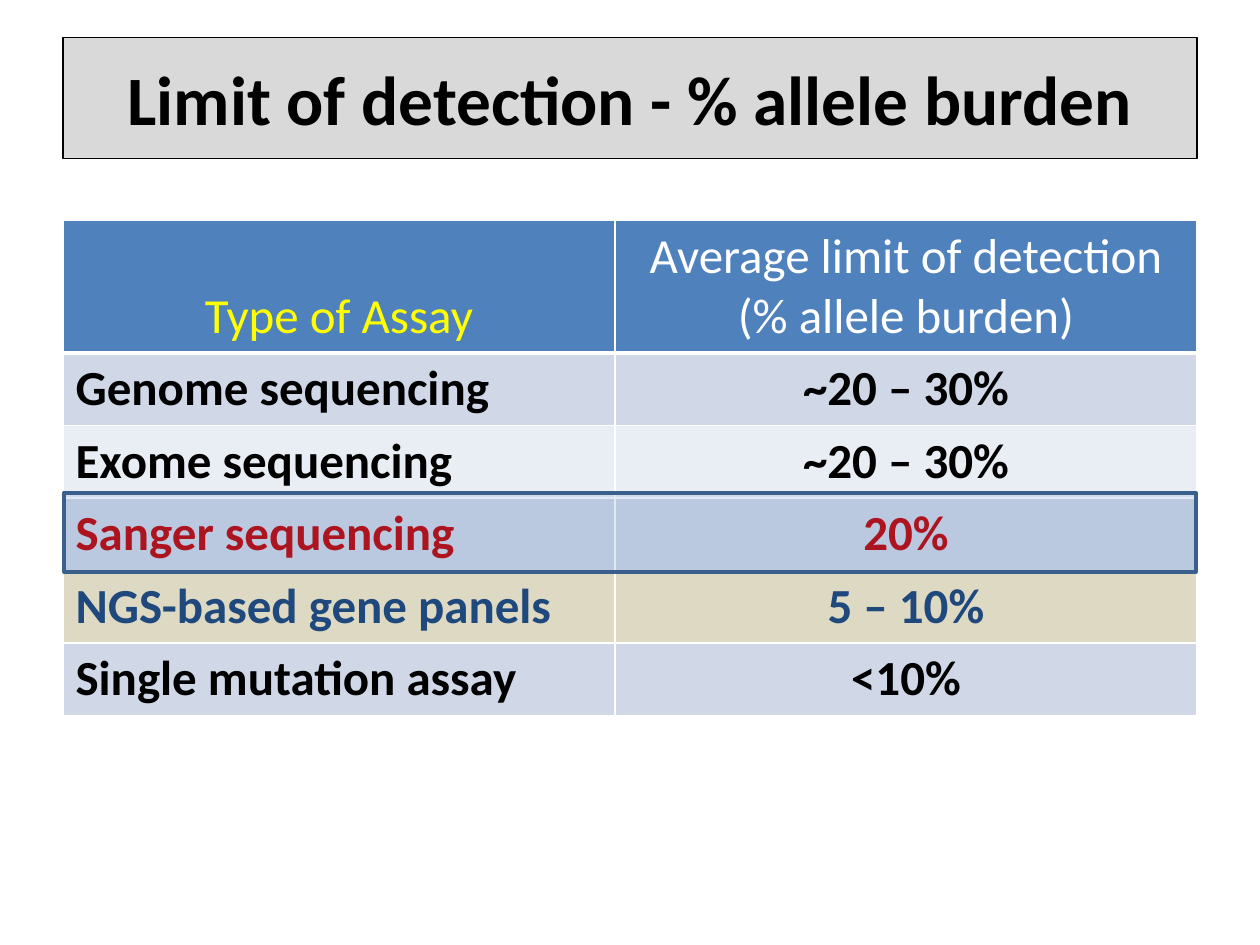
from lxml import etree
from pptx import Presentation
from pptx.dml.color import RGBColor
from pptx.enum.shapes import MSO_SHAPE as Shape
from pptx.enum.text import MSO_ANCHOR as Anchor, PP_ALIGN as Align
from pptx.oxml.ns import qn
from pptx.util import Inches, Pt

COLORS = {
    "white": "FFFFFF", "black": "000000", "title": "D9D9D9",
    "header": "4F81BD", "yellow": "FFFF00", "band": "D0D8E8",
    "light_band": "E9EDF4", "tan": "DDD9C3", "red": "C00000",
    "navy": "1F497D", "outline": "3A5F8C",
}
HEADINGS = [
    ("Type of Assay", "yellow", Anchor.BOTTOM),
    ("Average limit of detection (% allele burden)", "white", Anchor.TOP),
]
ASSAYS = [
    ("Genome sequencing", "~20 – 30%", "black", "band"),
    ("Exome sequencing", "~20 – 30%", "black", "light_band"),
    ("Sanger sequencing", "20%", "red", "band"),
    ("NGS-based gene panels", "5 – 10%", "navy", "tan"),
    ("Single mutation assay", "<10%", "black", "band"),
]


def rgb(name):
    """Return the named colour."""
    return RGBColor.from_string(COLORS[name])


def write(frame, text, size, color, bold, align):
    """Write one run into the first paragraph of a text frame."""
    paragraph = frame.paragraphs[0]
    paragraph.alignment = align
    run = paragraph.add_run()
    run.text = text
    run.font.name = "Calibri"
    run.font.size = Pt(size)
    run.font.bold = bold
    run.font.color.rgb = rgb(color)


def add_panel(slide, box, fill, line, width):
    """Add a flat outlined rectangle."""
    panel = slide.shapes.add_shape(Shape.RECTANGLE, *map(Inches, box))
    panel.shadow.inherit = False
    panel.fill.solid()
    panel.fill.fore_color.rgb = rgb(fill)
    panel.line.color.rgb = rgb(line)
    panel.line.width = Pt(width)
    return panel


def add_title(slide, box):
    """Add the title banner."""
    frame = add_panel(slide, box, "title", "black", 0.75).text_frame
    frame.word_wrap = True
    frame.vertical_anchor = Anchor.MIDDLE
    write(frame, "Limit of detection - % allele burden", 39.6, "black", True, Align.CENTER)


def style_cell(cell, fill, bottom=1):
    """Give a cell white borders and a solid fill."""
    properties = cell._tc.get_or_add_tcPr()
    for side, width in (("L", 1), ("R", 1), ("T", 1), ("B", bottom)):
        border = etree.SubElement(properties, qn(f"a:ln{side}"), w=str(Pt(width)))
        solid = etree.SubElement(border, qn("a:solidFill"))
        etree.SubElement(solid, qn("a:srgbClr"), val=COLORS["white"])
    cell.fill.solid()
    cell.fill.fore_color.rgb = rgb(fill)


def add_assay_table(slide, box, widths, row_height):
    """Add the table of assays and their detection limits."""
    holder = slide.shapes.add_table(len(ASSAYS) + 1, len(widths), *map(Inches, box))
    table = holder.table
    for column, width in zip(table.columns, widths):
        column.width = Inches(width)
    for row in table.rows:
        row.height = Inches(row_height)
    holder.height = Inches(box[3])
    for index, (heading, color, anchor) in enumerate(HEADINGS):
        cell = table.cell(0, index)
        style_cell(cell, "header", bottom=3)
        cell.vertical_anchor = anchor
        write(cell.text_frame, heading, 28, color, False, Align.CENTER)
    for number, (assay, limit, color, fill) in enumerate(ASSAYS, 1):
        for index, (text, align) in enumerate(((assay, Align.LEFT), (limit, Align.CENTER))):
            cell = table.cell(number, index)
            style_cell(cell, fill)
            write(cell.text_frame, text, 28, color, True, align)


def add_highlight(slide, box):
    """Add the translucent frame over the Sanger row."""
    highlight = add_panel(slide, box, "header", "outline", 2.25)
    tint = highlight.fill._xPr.find(qn("a:solidFill"))[0]
    etree.SubElement(tint, qn("a:alpha"), val="17000")


def main():
    """Build and save the slide."""
    deck = Presentation()
    deck.slide_width, deck.slide_height = Inches(10), Inches(7.5)
    slide = deck.slides.add_slide(deck.slide_layouts[6])
    add_title(slide, (0.5, 0.3, 9, 0.96))
    add_assay_table(slide, (0.5, 1.75, 9, 3.87), (4.38, 4.62), 0.41)
    add_highlight(slide, (0.51, 3.91, 8.98, 0.63))
    deck.save("out.pptx")


if __name__ == "__main__":
    main()
